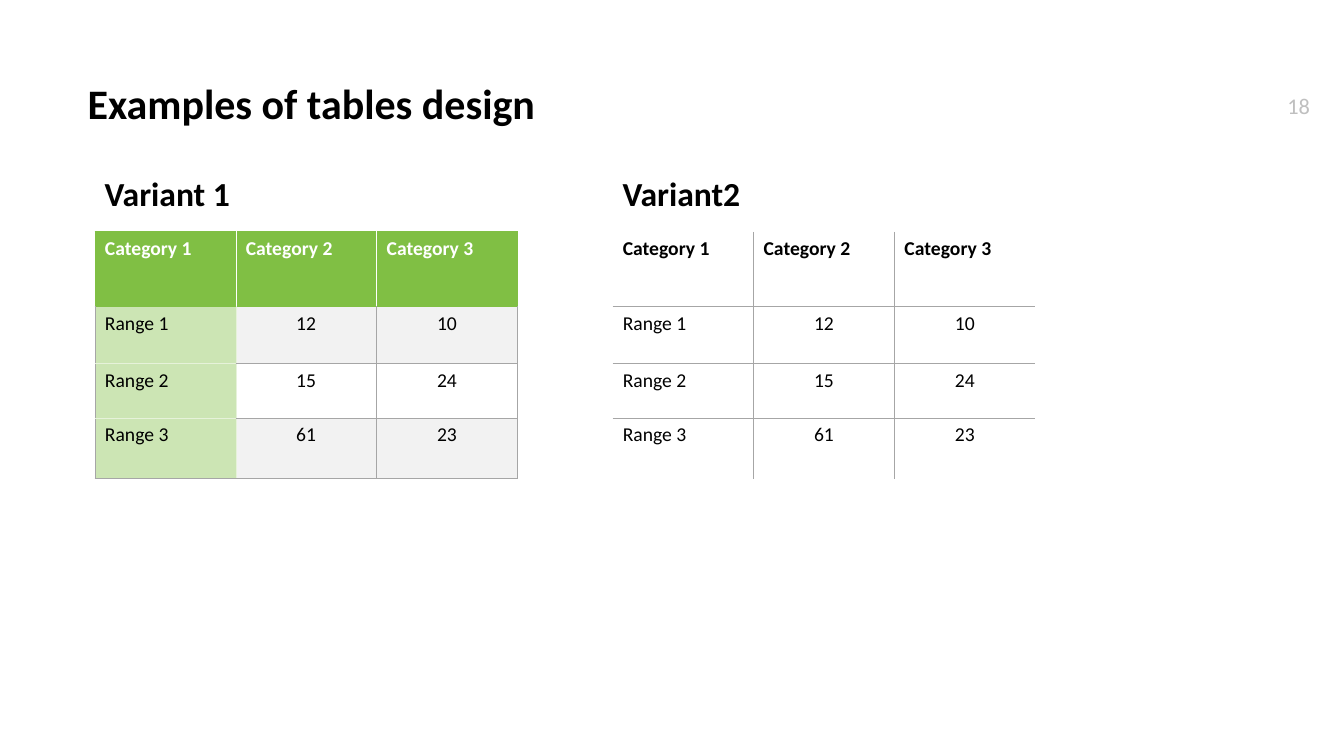
from dataclasses import dataclass
from typing import Callable, Optional

from lxml.etree import SubElement
from pptx import Presentation
from pptx.dml.color import RGBColor
from pptx.enum.text import MSO_ANCHOR as ANCHOR, MSO_AUTO_SIZE as AUTO_SIZE, PP_ALIGN as ALIGN
from pptx.oxml.ns import qn
from pptx.util import Cm, Pt

BLACK = RGBColor(0x00, 0x00, 0x00)
WHITE = RGBColor(0xFF, 0xFF, 0xFF)
GREEN = RGBColor(0x80, 0xBF, 0x44)
LIGHT_GREEN = RGBColor(0xCC, 0xE5, 0xB4)
PALE_GREEN = RGBColor(0xE6, 0xF2, 0xDA)
BAND = RGBColor(0xF2, 0xF2, 0xF2)
RULE = RGBColor(0xA6, 0xA6, 0xA6)
NUMBER_GREY = RGBColor(0xBF, 0xBF, 0xBF)

FONT = "Calibri"
ROWS = [
    ["Category 1", "Category 2", "Category 3"],
    ["Range 1", "12", "10"],
    ["Range 2", "15", "24"],
    ["Range 3", "61", "23"],
]
N_ROWS, N_COLS = len(ROWS), len(ROWS[0])
COL_WIDTH = 3.55
ROW_HEIGHTS = [1.89, 1.43, 1.38, 1.52]
TABLE_WIDTH = COL_WIDTH * N_COLS


@dataclass(frozen=True)
class Border:
    color: RGBColor
    width: float


GREEN_EDGE = Border(GREEN, 0.5)
WHITE_EDGE = Border(WHITE, 0.23)
PALE_EDGE = Border(PALE_GREEN, 0.23)
THIN_RULE = Border(RULE, 0.23)
RULE_EDGE = Border(RULE, 0.96)

EdgeRule = Callable[[int, int], Optional[Border]]


@dataclass(frozen=True)
class Variant:
    heading: str
    left: float
    header_color: RGBColor
    fill: Callable[[int, int], Optional[RGBColor]]
    horizontal: EdgeRule
    vertical: EdgeRule


def banded_fill(row: int, col: int) -> RGBColor:
    if row == 0:
        return GREEN
    if col == 0:
        return LIGHT_GREEN
    return BAND if row % 2 else WHITE


def banded_horizontal(edge: int, col: int) -> Border:
    if edge <= 1:
        return GREEN_EDGE
    return PALE_EDGE if col == 0 and edge < N_ROWS else THIN_RULE


def banded_vertical(row: int, edge: int) -> Border:
    if row == 0:
        return WHITE_EDGE if 0 < edge < N_COLS else GREEN_EDGE
    return PALE_EDGE if edge == 1 else THIN_RULE


def no_fill(row: int, col: int) -> None:
    return None


def inner_horizontal(edge: int, col: int) -> Optional[Border]:
    return RULE_EDGE if 0 < edge < N_ROWS else None


def inner_vertical(row: int, edge: int) -> Optional[Border]:
    return RULE_EDGE if 0 < edge < N_COLS else None


VARIANTS = [
    Variant("Variant 1", 2.39, WHITE, banded_fill, banded_horizontal, banded_vertical),
    Variant("Variant2", 15.44, BLACK, no_fill, inner_horizontal, inner_vertical),
]


def add_run(p, text: str, size: float, color: RGBColor, bold: bool = False) -> None:
    r = p.add_run()
    r.text = text
    r.font.name = FONT
    r.font.size = Pt(size)
    r.font.bold = bold
    r.font.color.rgb = color


def add_text_box(slide, left: float, top: float, width: float, height: float):
    sp = slide.shapes.add_textbox(Cm(left), Cm(top), Cm(width), Cm(height))
    sp.text_frame.word_wrap = True
    return sp.text_frame


def set_border(cell, side: str, border: Optional[Border]) -> None:
    ln = SubElement(cell._tc.get_or_add_tcPr(), qn(f"a:ln{side}"))
    if border is None:
        SubElement(ln, qn("a:noFill"))
        return
    ln.set("w", str(Pt(border.width)))
    fill = SubElement(ln, qn("a:solidFill"))
    SubElement(fill, qn("a:srgbClr")).set("val", str(border.color))


def add_variant(slide, variant: Variant) -> None:
    tf = add_text_box(slide, variant.left, 4.22, TABLE_WIDTH, 1.27)
    tf.auto_size = AUTO_SIZE.SHAPE_TO_FIT_TEXT
    add_run(tf.paragraphs[0], variant.heading, 24, BLACK, True)

    table = slide.shapes.add_table(
        N_ROWS, N_COLS, Cm(variant.left), Cm(5.84), Cm(TABLE_WIDTH), Cm(sum(ROW_HEIGHTS))
    ).table
    table.first_row = False
    table.horz_banding = False
    for column in table.columns:
        column.width = Cm(COL_WIDTH)
    for i, (height, texts) in enumerate(zip(ROW_HEIGHTS, ROWS)):
        table.rows[i].height = Cm(height)
        for j, text in enumerate(texts):
            cell = table.cell(i, j)
            set_border(cell, "L", variant.vertical(i, j))
            set_border(cell, "R", variant.vertical(i, j + 1))
            set_border(cell, "T", variant.horizontal(i, j))
            set_border(cell, "B", variant.horizontal(i + 1, j))
            color = variant.fill(i, j)
            if color is None:
                cell.fill.background()
            else:
                cell.fill.solid()
                cell.fill.fore_color.rgb = color
            p = cell.text_frame.paragraphs[0]
            p.alignment = ALIGN.CENTER if i and j else ALIGN.LEFT
            add_run(p, text, 14, BLACK if i else variant.header_color, i == 0)


def add_title(slide, text: str) -> None:
    sp = slide.shapes.title
    sp.left, sp.top, sp.width, sp.height = Cm(1.45), Cm(1.57), Cm(29.72), Cm(2.18)
    tf = sp.text_frame
    tf.vertical_anchor = ANCHOR.MIDDLE
    tf.margin_left = Cm(0.76)
    p = tf.paragraphs[0]
    p.alignment = ALIGN.LEFT
    p.line_spacing = 0.9
    add_run(p, text, 30, BLACK, True)


def add_page_number(slide, text: str) -> None:
    tf = add_text_box(slide, 31.6, 2.16, 2.26, 1.02)
    tf.vertical_anchor = ANCHOR.MIDDLE
    p = tf.paragraphs[0]
    p.alignment = ALIGN.CENTER
    add_run(p, text, 16, NUMBER_GREY)


def main() -> None:
    prs = Presentation()
    prs.slide_width, prs.slide_height = Cm(33.87), Cm(19.05)
    slide = prs.slides.add_slide(prs.slide_layouts[5])
    add_title(slide, "Examples of tables design")
    add_page_number(slide, "18")
    for variant in VARIANTS:
        add_variant(slide, variant)
    prs.save("out.pptx")


if __name__ == "__main__":
    main()
